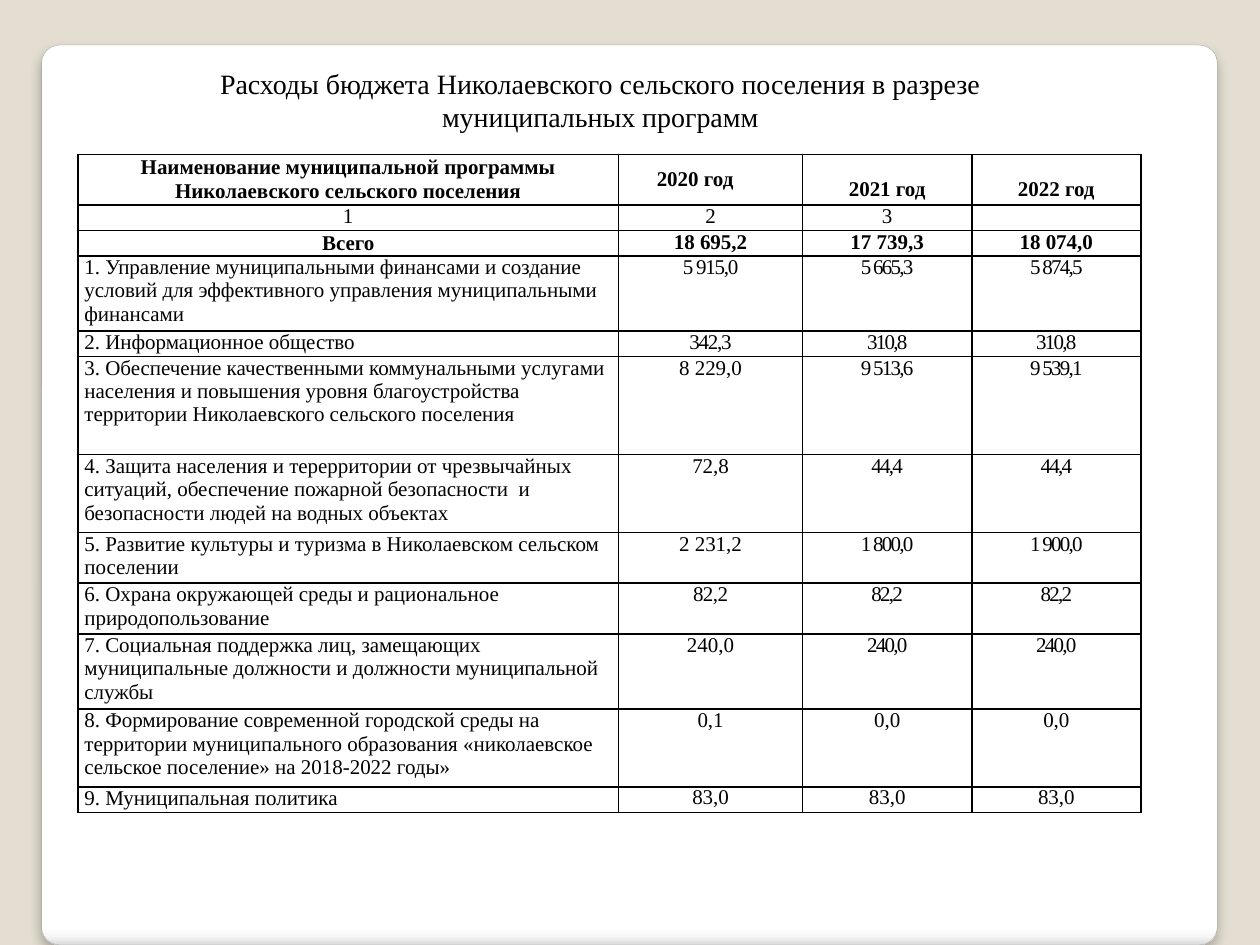
"""Build a slide with a table of municipal programme spending."""
from lxml.etree import SubElement
from pptx import Presentation
from pptx.dml.color import RGBColor
from pptx.enum.shapes import MSO_SHAPE
from pptx.enum.text import MSO_ANCHOR, PP_ALIGN
from pptx.oxml import parse_xml
from pptx.oxml.ns import nsdecls, qn
from pptx.util import Cm, Pt

BLACK = RGBColor(0x00, 0x00, 0x00)
BEIGE = RGBColor(0xE3, 0xDE, 0xD1)
GREY = RGBColor(0xA4, 0xA4, 0xA4)
PANEL_STOPS = [(0, "FFFFFF"), (98, "FFFFFF"), (99, "F7F7F7"), (100, "DADADA")]
FONT = "Times New Roman"

TITLE = "Расходы бюджета Николаевского сельского поселения в разрезе муниципальных программ"
HEADINGS = [
    ("Наименование муниципальной программы Николаевского сельского поселения",
     "2020 год", "2021 год", "2022 год"),
    ("1", "2", "3", ""),
    ("Всего", "18 695,2", "17 739,3", "18 074,0"),
]
TIGHT = -1
PROGRAMMES = [
    ("1. Управление муниципальными финансами и создание условий для эффективного "
     "управления муниципальными финансами", "5 915,0", "5 665,3", "5 874,5"),
    ("2. Информационное общество", "342,3", "310,8", "310,8"),
    ("3. Обеспечение качественными коммунальными услугами населения и повышения уровня "
     "благоустройства территории Николаевского сельского поселения",
     "8 229,0", "9 513,6", "9 539,1"),
    ("4. Защита населения и терерритории от чрезвычайных ситуаций, обеспечение пожарной "
     "безопасности  и безопасности людей на водных объектах", "72,8", "44,4", "44,4"),
    ("5. Развитие культуры и туризма в Николаевском сельском поселении",
     "2 231,2", "1 800,0", "1 900,0"),
    ("6. Охрана окружающей среды и рациональное природопользование", "82,2", "82,2", "82,2"),
    ("7. Социальная поддержка лиц, замещающих муниципальные должности и должности "
     "муниципальной службы", "240,0", "240,0", "240,0"),
    ("8. Формирование современной городской среды на территории муниципального образования "
     "«николаевское сельское поселение» на 2018-2022 годы»", "0,1", "0,0", "0,0"),
    ("9. Муниципальная политика", "83,0", "83,0", "83,0"),
]
TRACKING = [(0, 0, 0, 0)] * 3 + [
    (0, -0.7, TIGHT, TIGHT), (0, -0.7, TIGHT, TIGHT), (0, 0, TIGHT, TIGHT),
    (0, 0, TIGHT, TIGHT), (0, 0, TIGHT, TIGHT), (0, -0.3, TIGHT, TIGHT),
    (0, 0, TIGHT, TIGHT), (0, 0, 0, 0), (0, 0, 0, 0),
]
BOLD_ROWS = (0, 2)
COL_WIDTHS = [10.9, 3.71, 3.41, 3.41]
ROW_HEIGHTS = [1.02, 0.51, 0.51, 1.52, 0.51, 1.98, 1.57, 1.02, 1.02, 1.52, 1.57, 0.51]


def add_text(p, text, size, bold=False, tracking=0):
    r = p.add_run()
    r.text = text
    r.font.size = Pt(size)
    r.font.name = FONT
    r.font.bold = bold
    r.font.color.rgb = BLACK
    if tracking:
        r._r.get_or_add_rPr().set("spc", str(round(tracking * 100)))


def add_panel(s):
    panel = s.shapes.add_shape(MSO_SHAPE.ROUNDED_RECTANGLE,
                               Cm(0.84), Cm(0.91), Cm(23.7), Cm(18.14))
    panel.adjustments[0] = 0.02
    panel.line.color.rgb = GREY
    panel.line.width = Pt(0.16)
    panel.fill.gradient()
    panel.fill.gradient_angle = 270
    stops = panel._element.spPr.find(qn("a:gradFill")).find(qn("a:gsLst"))
    for stop in list(stops):
        stops.remove(stop)
    for position, colour in PANEL_STOPS:
        stop = SubElement(stops, qn("a:gs"), pos=str(position * 1000))
        SubElement(stop, qn("a:srgbClr"), val=colour)
    panel._element.spPr.append(parse_xml(
        f'<a:effectLst {nsdecls("a")}><a:outerShdw blurRad="{Pt(6)}" dist="{Pt(4)}" '
        'dir="5400000" algn="t" rotWithShape="0"><a:srgbClr val="000000">'
        '<a:alpha val="25000"/></a:srgbClr></a:outerShdw></a:effectLst>'))
    s.shapes._spTree.insert(2, panel._element)


def format_title(title):
    title.left, title.top, title.width, title.height = Cm(2.18), Cm(1.2), Cm(19.84), Cm(1.63)
    tf = title.text_frame
    tf.word_wrap = True
    tf.vertical_anchor = MSO_ANCHOR.MIDDLE
    tf.margin_left = tf.margin_right = Cm(0.5)
    p = tf.paragraphs[0]
    p.alignment = PP_ALIGN.CENTER
    add_text(p, TITLE, 16)


def format_cell(cell):
    cell.margin_left = cell.margin_right = Cm(0.13)
    cell.margin_top = cell.margin_bottom = 0
    tcPr = cell._tc.get_or_add_tcPr()
    for side in ("a:lnL", "a:lnR", "a:lnT", "a:lnB"):
        line = SubElement(tcPr, qn(side), w=str(Pt(1)))
        fill = SubElement(line, qn("a:solidFill"))
        SubElement(fill, qn("a:srgbClr"), val=str(BLACK))
    cell.fill.background()


def fill_cell(cell, text, row, col):
    p = cell.text_frame.paragraphs[0]
    if col or row < len(HEADINGS):
        p.alignment = PP_ALIGN.CENTER
    if text:
        add_text(p, text, 12, row in BOLD_ROWS, TRACKING[row][col])
    else:
        SubElement(p._p, qn("a:endParaRPr"), sz="1200")
    if col and row == len(ROW_HEIGHTS) - 1:
        p.line_spacing = 0.95


def add_spending_table(s):
    rows = HEADINGS + PROGRAMMES
    table = s.shapes.add_table(len(rows), len(COL_WIDTHS), Cm(1.57), Cm(3.11),
                               Cm(sum(COL_WIDTHS)), Cm(sum(ROW_HEIGHTS))).table
    table.first_row = table.horz_banding = False
    for column, width in zip(table.columns, COL_WIDTHS):
        column.width = Cm(width)
    for i, (values, height) in enumerate(zip(rows, ROW_HEIGHTS)):
        table.rows[i].height = Cm(height)
        for j, text in enumerate(values):
            format_cell(table.cell(i, j))
            fill_cell(table.cell(i, j), text, i, j)
    for i, j in ((0, 0), (0, 1), (2, 0)):
        table.cell(i, j).vertical_anchor = MSO_ANCHOR.MIDDLE
    first_year = table.cell(0, 1)
    first_year.margin_left = Cm(0.77)
    first_year.text_frame.paragraphs[0].alignment = PP_ALIGN.LEFT
    for j in (2, 3):
        table.cell(0, j).vertical_anchor = MSO_ANCHOR.BOTTOM
        table.cell(0, j).margin_bottom = Cm(0.08)


def main():
    prs = Presentation()
    prs.slide_width, prs.slide_height = Cm(25.4), Cm(19.05)
    s = prs.slides.add_slide(prs.slide_layouts[5])
    s.background.fill.solid()
    s.background.fill.fore_color.rgb = BEIGE
    add_panel(s)
    add_spending_table(s)
    format_title(s.shapes.title)
    prs.save("out.pptx")


if __name__ == "__main__":
    main()
